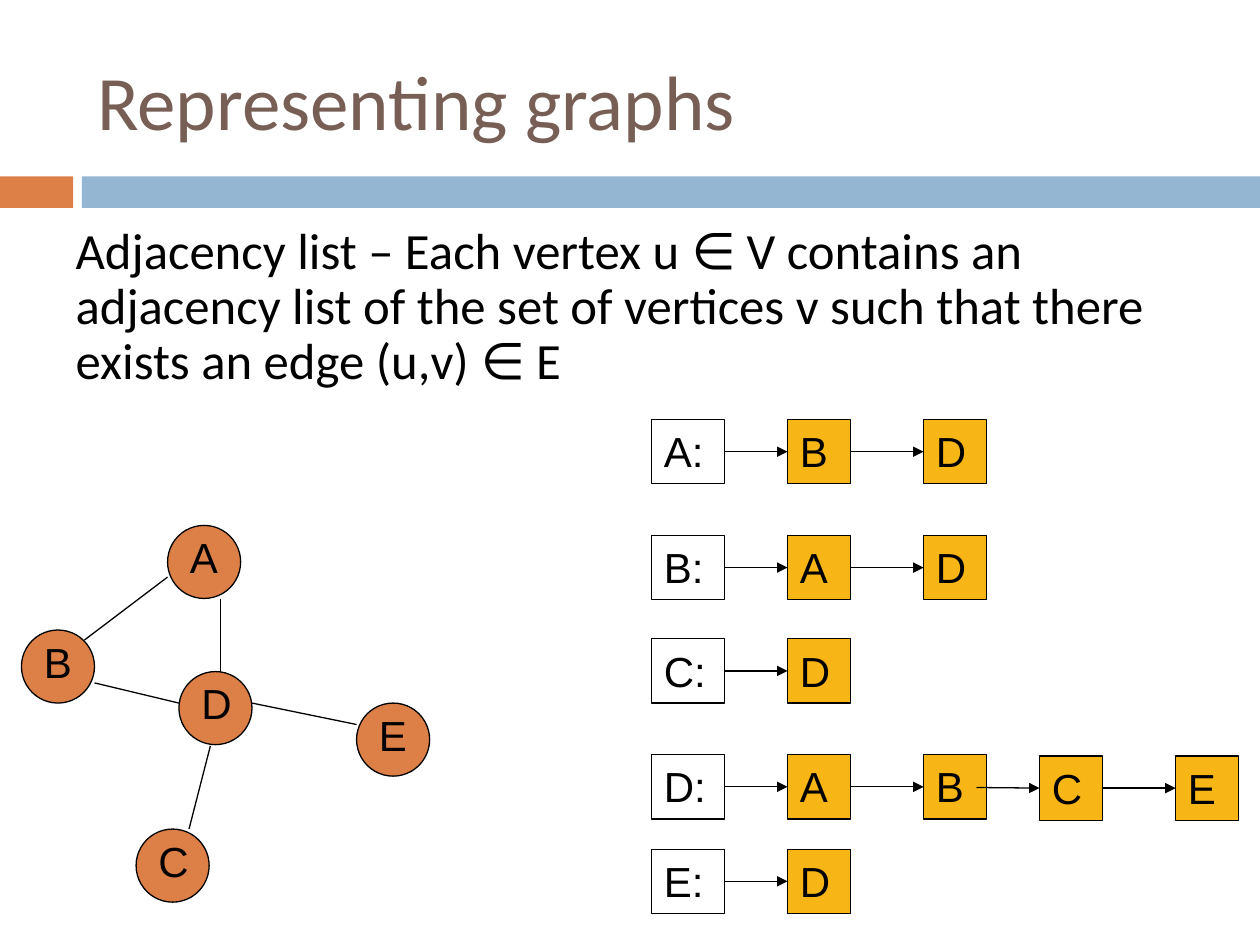
from pptx import Presentation
from pptx.dml.color import RGBColor
from pptx.enum.shapes import MSO_CONNECTOR, MSO_SHAPE
from pptx.enum.text import MSO_ANCHOR, MSO_AUTO_SIZE, PP_ALIGN
from pptx.oxml.ns import qn
from pptx.util import Inches, Pt
from lxml import etree

RECT, OVAL = MSO_SHAPE.RECTANGLE, MSO_SHAPE.OVAL
LINE = MSO_CONNECTOR.STRAIGHT
TOP, MIDDLE = MSO_ANCHOR.TOP, MSO_ANCHOR.MIDDLE
LEFT = PP_ALIGN.LEFT
FIXED, GROW = MSO_AUTO_SIZE.NONE, MSO_AUTO_SIZE.SHAPE_TO_FIT_TEXT
LEFT_SIDE, RIGHT_SIDE = 1, 3

COLORS = {"orange": "DD8047", "blue": "94B6D2", "title": "775F55",
          "gold": "F7B615", "black": "000000"}


class Deck:
    """Holds the style and the current slide."""
    head, label = "Calibri", "Arial"
    thin = Pt(0.75)

    def __init__(self, slide):
        self.slide = slide
        self.shapes = slide.shapes

    def color(self, name):
        return RGBColor.from_string(COLORS[name])

    def place(self, shape, *area):
        shape.left, shape.top, shape.width, shape.height = map(Inches, area)

    def letter(self, shape, text, font, size, color="black", anchor=TOP, fit=FIXED):
        frame = shape.text_frame
        frame.text = text
        frame.word_wrap = True
        frame.auto_size = fit
        frame.vertical_anchor = anchor
        para = frame.paragraphs[0]
        para.alignment = LEFT
        for run in para.runs:
            run.font.name, run.font.size = font, Pt(size)
            run.font.color.rgb = self.color(color)
        return para

    def title(self, text, *area):
        shape = self.shapes.title
        self.place(shape, *area)
        self.letter(shape, text, self.head, 44, "title", MIDDLE)

    def body(self, text, *area):
        shape = self.slide.placeholders[1]
        self.place(shape, *area)
        para = self.letter(shape, text, self.head, 29)
        para.line_spacing, para.space_before = 0.9, Pt(7)
        props = para._p.get_or_add_pPr()
        props.set("marL", "0")
        props.set("indent", "0")
        etree.SubElement(props, qn("a:buNone"))

    def shape(self, kind, area, fill=None, lined=True):
        shape = self.shapes.add_shape(kind, *map(Inches, area))
        shape.shadow.inherit = False
        if fill:
            shape.fill.solid()
            shape.fill.fore_color.rgb = self.color(fill)
        else:
            shape.fill.background()
        if lined:
            shape.line.color.rgb = self.color("black")
            shape.line.width = self.thin
        else:
            shape.line.fill.background()
        return shape

    def box(self, text, left, top, width, fill=None):
        shape = self.shape(RECT, (left, top, width, 0.51), fill)
        self.letter(shape, text, self.label, 24, fit=GROW)
        return shape

    def node(self, text, left, top):
        disc = self.shape(OVAL, (left, top, 0.58, 0.58), "orange")
        name = self.shapes.add_textbox(*map(Inches, (left + 0.08, top, 0.5, 0.5)))
        self.letter(name, text, self.label, 24, fit=GROW)
        self.shapes.add_group_shape([disc, name])

    def line(self, *ends):
        line = self.shapes.add_connector(LINE, *map(Inches, ends))
        line.line.color.rgb = self.color("black")
        line.line.width = self.thin
        etree.SubElement(line._element.spPr, qn("a:effectLst"))
        return line

    def arrow(self, start, end, *ends):
        arrow = self.line(*ends)
        if start:
            arrow.begin_connect(start, RIGHT_SIDE)
        arrow.end_connect(end, LEFT_SIDE)
        stroke = arrow._element.spPr.find(qn("a:ln"))
        etree.SubElement(stroke, qn("a:tailEnd")).set("type", "triangle")


# Graph and its adjacency lists
NODES = {"A": (1.33, 4.17), "B": (0.17, 5), "C": (1.08, 6.58),
         "E": (2.83, 5.58), "D": (1.42, 5.33)}
EDGES = [(0.67, 5.08, 1.33, 4.58), (0.75, 5.42, 1.42, 5.58),
         (1.75, 5.33, 1.75, 4.75), (1.67, 5.92, 1.5, 6.58),
         (2, 5.58, 2.83, 5.75)]
LISTS = [("A", 3.33, "BD"), ("B", 4.25, "AD"), ("C", 5.07, "D"),
         ("D", 5.99, "ABCE"), ("E", 6.74, "D")]
COLS = [6.25, 7.33, 8.25, 9.33]


def main():
    prs = Presentation()
    prs.slide_width, prs.slide_height = Inches(10), Inches(7.5)
    deck = Deck(prs.slides.add_slide(prs.slide_layouts[1]))

    # Title band and text
    deck.shape(RECT, (0, 1.4, 0.58, 0.25), "orange", lined=False)
    deck.shape(RECT, (0.65, 1.4, 9.35, 0.25), "blue", lined=False)
    deck.title("Representing graphs", 0.67, 0.25, 8.92, 1.08)
    deck.body("Adjacency list – Each vertex u ∈ V contains an adjacency list "
              "of the set of vertices v such that there exists an edge (u,v) ∈ E",
              0.5, 1.74, 9, 1.54)

    # Graph
    for name, spot in NODES.items():
        deck.node(name, *spot)
    for edge in EDGES:
        deck.line(*edge)

    # Adjacency lists: the second pair of a long list sits slightly lower
    for name, top, links in LISTS:
        last, right = deck.box(name + ":", 5.17, top, 0.58), 5.75
        for col, (left, link) in enumerate(zip(COLS, links)):
            drop = 0.01 if col > 1 else 0
            item = deck.box(link, left, top + drop, 0.5, "gold")
            mid = top + drop + 0.25
            # The arrow between the pairs starts inside the box before it
            if col == 2:
                last, right = None, left - 0.5
            deck.arrow(last, item, right, mid, left, mid)
            last, right = item, left + 0.5

    prs.save("out.pptx")


if __name__ == "__main__":
    main()
